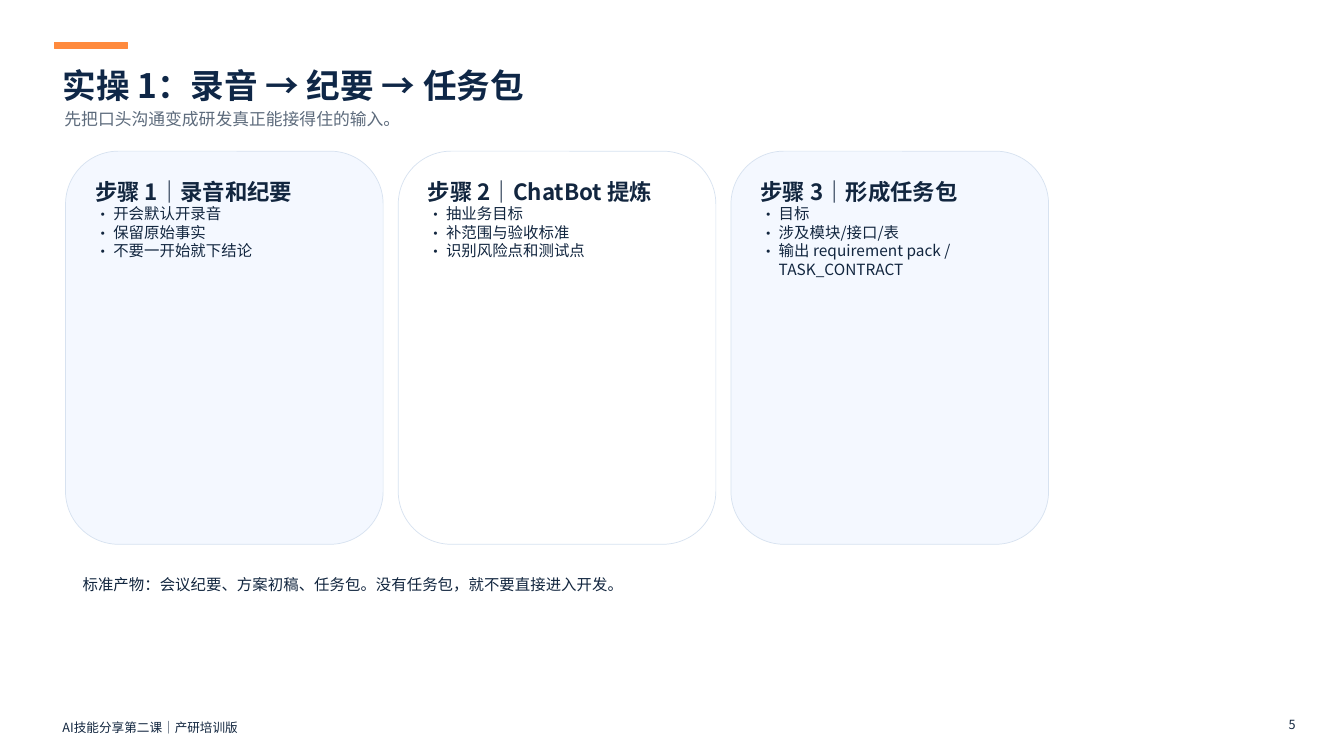
import pptx
import pptx.dml.color
import pptx.enum.shapes
import pptx.enum.text
import pptx.oxml.ns
import pptx.util
from lxml import etree

Inches = pptx.util.Inches
RGBColor = pptx.dml.color.RGBColor
PP_ALIGN = pptx.enum.text.PP_ALIGN
MSO_SHAPE = pptx.enum.shapes.MSO_SHAPE

FONT = "Noto Sans CJK SC"
ORANGE = RGBColor(0xFF, 0x8A, 0x3D)
NAVY = RGBColor(0x0F, 0x27, 0x47)
INK = RGBColor(0x12, 0x26, 0x3F)
GRAY = RGBColor(0x5D, 0x6B, 0x7C)
PALE_BLUE = RGBColor(0xF4, 0xF8, 0xFF)
WHITE = RGBColor(0xFF, 0xFF, 0xFF)
BORDER = RGBColor(0xD7, 0xE2, 0xF0)

LEFT = 0.54
CARD_LEFT, CARD_TOP = 0.65, 1.5
CARD_WIDTH, CARD_HEIGHT, CARD_GAP = 3.15, 3.9, 0.15
BULLET_INDENT = Inches(0.18)


def write(paragraph, text, size=11, color=INK, bold=False,
          align=PP_ALIGN.LEFT, bullet=False):
    paragraph.alignment = align
    if bullet:
        properties = paragraph._p.get_or_add_pPr()
        properties.set("marL", str(BULLET_INDENT))
        properties.set("indent", str(-BULLET_INDENT))
        for tag, key, value in (("a:buFont", "typeface", FONT),
                                ("a:buChar", "char", "•")):
            etree.SubElement(properties, pptx.oxml.ns.qn(tag)).set(key, value)
    run = paragraph.add_run()
    run.text = text
    run.font.size = pptx.util.Pt(size)
    run.font.bold = bold
    run.font.color.rgb = color
    run.font.name = FONT
    east_asian = etree.SubElement(run._r.get_or_add_rPr(), pptx.oxml.ns.qn("a:ea"))
    east_asian.set("typeface", FONT)


def set_frame(frame, side, end, fit):
    """Wrap, anchor at the top and set the side and end margins."""
    frame.word_wrap = True
    frame.auto_size = fit
    frame.vertical_anchor = pptx.enum.text.MSO_ANCHOR.TOP
    frame.margin_left = frame.margin_right = Inches(side)
    frame.margin_top = frame.margin_bottom = Inches(end)


deck = pptx.Presentation()
deck.slide_width, deck.slide_height = Inches(13.33), Inches(7.5)
slide = deck.slides.add_slide(deck.slide_layouts[5])
slide.background.fill.solid()
slide.background.fill.fore_color.rgb = WHITE

accent = slide.shapes.add_shape(
    MSO_SHAPE.RECTANGLE, Inches(LEFT), Inches(0.42), Inches(0.72), Inches(0.06))
accent.shadow.inherit = False
accent.fill.solid()
accent.fill.fore_color.rgb = ORANGE
accent.line.color.rgb = ORANGE
accent.line.width = pptx.util.Pt(0.5)

title = slide.shapes.title
title.left, title.top = Inches(LEFT), Inches(0.58)
title.width, title.height = Inches(6.6), Inches(0.45)
set_frame(title.text_frame, 0.08, 0.06, pptx.enum.text.MSO_AUTO_SIZE.SHAPE_TO_FIT_TEXT)
write(title.text_frame.paragraphs[0], "实操 1：录音 → 纪要 → 任务包",
      size=24, color=NAVY, bold=True)

captions = [
    ("先把口头沟通变成研发真正能接得住的输入。",
     (0.56, 1.02, 8.2, 0.28), {"size": 12, "color": GRAY}),
    ("标准产物：会议纪要、方案初稿、任务包。没有任务包，就不要直接进入开发。",
     (0.74, 5.65, 9.8, 0.28), {}),
    ("AI技能分享第二课｜产研培训版", (LEFT, 7.08, 3.6, 0.18), {"size": 9}),
    ("5", (12.7, 7.05, 0.2, 0.18), {"size": 9, "align": PP_ALIGN.RIGHT}),
]
for text, place, style in captions:
    caption = slide.shapes.add_textbox(*map(Inches, place))
    set_frame(caption.text_frame, 0.08, 0.06,
              pptx.enum.text.MSO_AUTO_SIZE.SHAPE_TO_FIT_TEXT)
    write(caption.text_frame.paragraphs[0], text, **style)

steps = [
    ("步骤 1｜录音和纪要", PALE_BLUE,
     ["开会默认开录音", "保留原始事实", "不要一开始就下结论"]),
    ("步骤 2｜ChatBot 提炼", WHITE,
     ["抽业务目标", "补范围与验收标准", "识别风险点和测试点"]),
    ("步骤 3｜形成任务包", PALE_BLUE,
     ["目标", "涉及模块/接口/表", "输出 requirement pack / TASK_CONTRACT"]),
]
for column, (heading, fill, points) in enumerate(steps):
    card = slide.shapes.add_shape(
        MSO_SHAPE.ROUNDED_RECTANGLE,
        Inches(CARD_LEFT + column * (CARD_WIDTH + CARD_GAP)), Inches(CARD_TOP),
        Inches(CARD_WIDTH), Inches(CARD_HEIGHT))
    card.shadow.inherit = False
    card.fill.solid()
    card.fill.fore_color.rgb = fill
    card.line.color.rgb = BORDER
    card.line.width = pptx.util.Pt(0.5)
    set_frame(card.text_frame, 0.14, 0.11, pptx.enum.text.MSO_AUTO_SIZE.NONE)
    write(card.text_frame.paragraphs[0], heading, size=16, bold=True)
    for point in points:
        write(card.text_frame.add_paragraph(), point, bullet=True)

deck.save("out.pptx")
